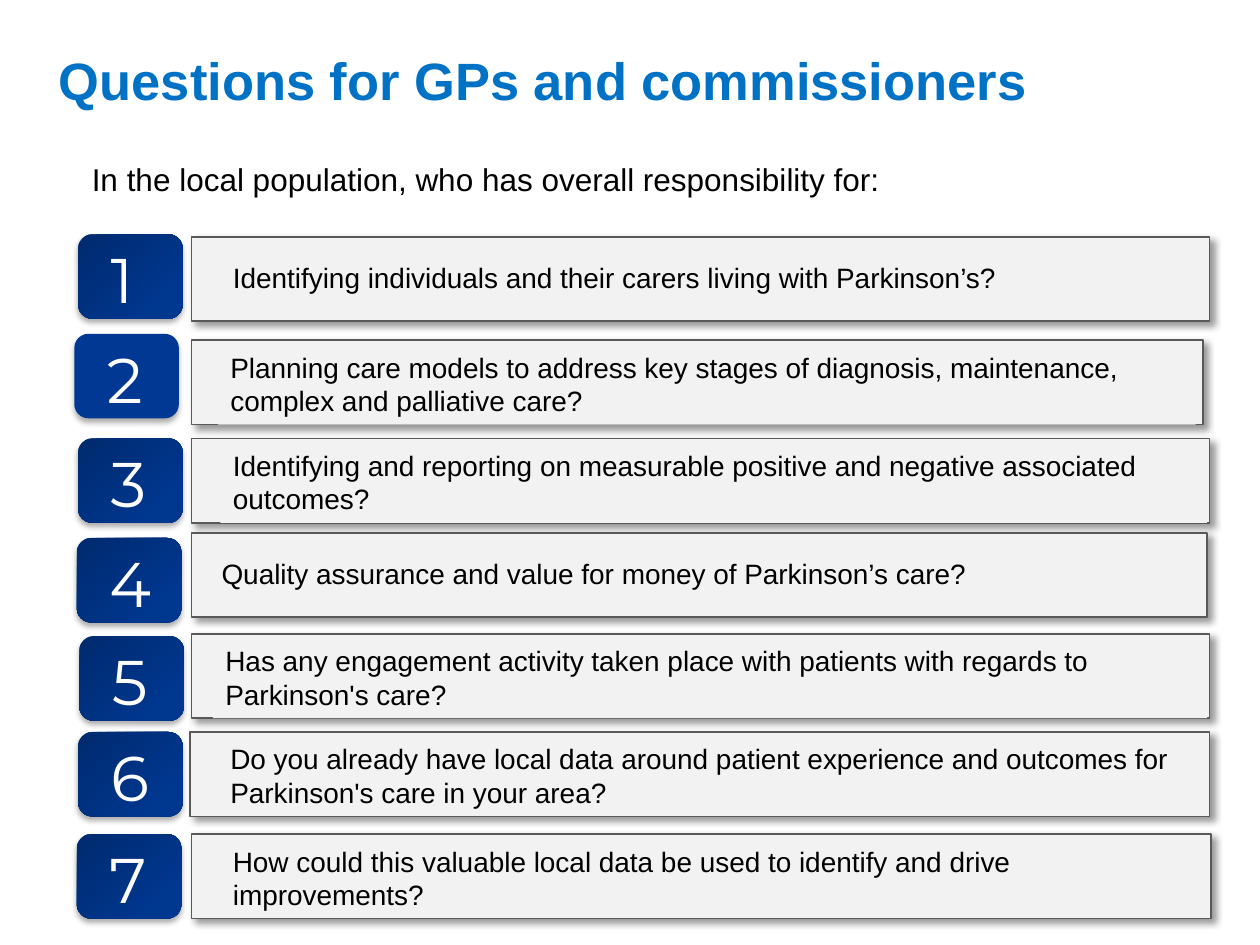
import pptx
import pptx.dml.color
import pptx.enum.shapes
import pptx.enum.text
import pptx.oxml
import pptx.oxml.ns
import pptx.util
from pptx.util import Inches

RGBColor = pptx.dml.color.RGBColor
MSO_SHAPE = pptx.enum.shapes.MSO_SHAPE
TITLE_BLUE = RGBColor(0x00, 0x72, 0xC6)
BADGE_BLUE = RGBColor(0x00, 0x38, 0x93)
GRADIENT_DARK = RGBColor(0x00, 0x2A, 0x6E)
GRADIENT_LIGHT = RGBColor(0x00, 0x37, 0x8F)
BAR_GREY = RGBColor(0xF2, 0xF2, 0xF2)
BORDER_GREY = RGBColor(0x59, 0x59, 0x59)
BLACK = RGBColor(0, 0, 0)
WHITE = RGBColor(0xFF, 0xFF, 0xFF)

ROW_HEIGHT = 0.67
BADGE_WIDTH = 0.83

# badge left, badge top, bar left, bar top, bar width,
# text left, text width, lines, text has its own fill, question
QUESTIONS = [
    (0.62, 1.86, 1.52, 1.88, 8.08, 1.75, 7.83, 1, False,
     "Identifying individuals and their carers living with Parkinson’s?"),
    (0.59, 2.65, 1.52, 2.70, 8.03, 1.73, 7.76, 2, True,
     "Planning care models to address key stages of diagnosis, maintenance, "
     "complex and palliative care?"),
    (0.62, 3.48, 1.52, 3.48, 8.08, 1.75, 7.83, 2, True,
     "Identifying and reporting on measurable positive and negative associated "
     "outcomes?"),
    (0.61, 4.27, 1.52, 4.23, 8.06, 1.66, 7.91, 1, False,
     "Quality assurance and value for money of Parkinson’s care?"),
    (0.63, 5.05, 1.52, 5.03, 8.08, 1.69, 7.89, 2, True,
     "Has any engagement activity taken place with patients with regards to "
     "Parkinson's care?"),
    (0.62, 5.81, 1.51, 5.81, 8.09, 1.73, 7.87, 2, False,
     "Do you already have local data around patient experience and outcomes for "
     "Parkinson's care in your area?"),
    (0.61, 6.62, 1.52, 6.62, 8.09, 1.75, 7.87, 2, False,
     "How could this valuable local data be used to identify and drive "
     "improvements?"),
]

prs = pptx.Presentation()
prs.slide_width = Inches(10)
prs.slide_height = Inches(7.5)
s = prs.slides.add_slide(prs.slide_layouts[6])


def add_text(left, top, width, height, text, size, color, font="Arial", wrap=True):
    sp = s.shapes.add_textbox(Inches(left), Inches(top), Inches(width), Inches(height))
    tf = sp.text_frame
    tf.word_wrap = wrap
    tf.auto_size = pptx.enum.text.MSO_AUTO_SIZE.SHAPE_TO_FIT_TEXT
    p = tf.paragraphs[0]
    p.text = text
    p.font.size = pptx.util.Pt(size)
    p.font.name = font
    p.font.color.rgb = color
    return sp


def add_shadowed(kind, left, top, width, opacity, blur, distance, angle):
    """Add a row-high shape with a black shadow (percent, points, points, degrees)."""
    sp = s.shapes.add_shape(kind, Inches(left), Inches(top),
                            Inches(width), Inches(ROW_HEIGHT))
    sp.shadow.inherit = False
    effects = sp._element.spPr.find(pptx.oxml.ns.qn("a:effectLst"))
    effects.append(pptx.oxml.parse_xml(
        f'<a:outerShdw {pptx.oxml.ns.nsdecls("a")} blurRad="{pptx.util.Pt(blur)}" '
        f'dist="{pptx.util.Pt(distance)}" dir="{angle * 60000}" algn="tl" '
        f'rotWithShape="0"><a:srgbClr val="000000"><a:alpha val="{opacity * 1000}"/>'
        '</a:srgbClr></a:outerShdw>'))
    return sp


title = add_text(0.37, 0.27, 8.57, 0.73, "Questions for GPs and commissioners",
                 30, TITLE_BLUE)
title.text_frame.auto_size = pptx.enum.text.MSO_AUTO_SIZE.NONE
title.text_frame.vertical_anchor = pptx.enum.text.MSO_ANCHOR.MIDDLE
title.text_frame.paragraphs[0].font.bold = True

add_text(0.63, 1.22, 7.49, 0.4,
         "In the local population, who has overall responsibility for:", 18, BLACK)

for number, row in enumerate(QUESTIONS, start=1):
    (badge_left, badge_top, bar_left, bar_top, bar_width,
     text_left, text_width, lines, filled, question) = row

    badge = add_shadowed(MSO_SHAPE.ROUNDED_RECTANGLE, badge_left, badge_top,
                         BADGE_WIDTH, 32, 3.5, 2.2, 90)
    badge.line.fill.background()
    if number == 2:
        badge.fill.solid()
        badge.fill.fore_color.rgb = BADGE_BLUE
    else:
        badge.fill.gradient()
        badge.fill.gradient_angle = 315
        for stop, color in zip(badge.fill.gradient_stops,
                               (GRADIENT_DARK, GRADIENT_LIGHT)):
            stop.color.rgb = color
        badge.fill.gradient_stops[1].position = 0.8
    digit_width = 0.54 if number > 5 else 0.48
    add_text(badge_left + 0.16, badge_top, digit_width, 0.71, str(number),
             36, WHITE, "Montserrat", wrap=False)

    bar = add_shadowed(MSO_SHAPE.RECTANGLE, bar_left, bar_top, bar_width, 40, 4, 3, 45)
    bar.fill.solid()
    bar.fill.fore_color.rgb = BAR_GREY
    bar.line.color.rgb = BORDER_GREY
    bar.line.width = pptx.util.Pt(1)
    text_offset, text_height = (0.14, 0.37) if lines == 1 else (0.03, 0.64)
    label = add_text(text_left, bar_top + text_offset, text_width, text_height,
                     question, 16, BLACK)
    if filled:
        label.fill.solid()
        label.fill.fore_color.rgb = BAR_GREY

prs.save("out.pptx")
